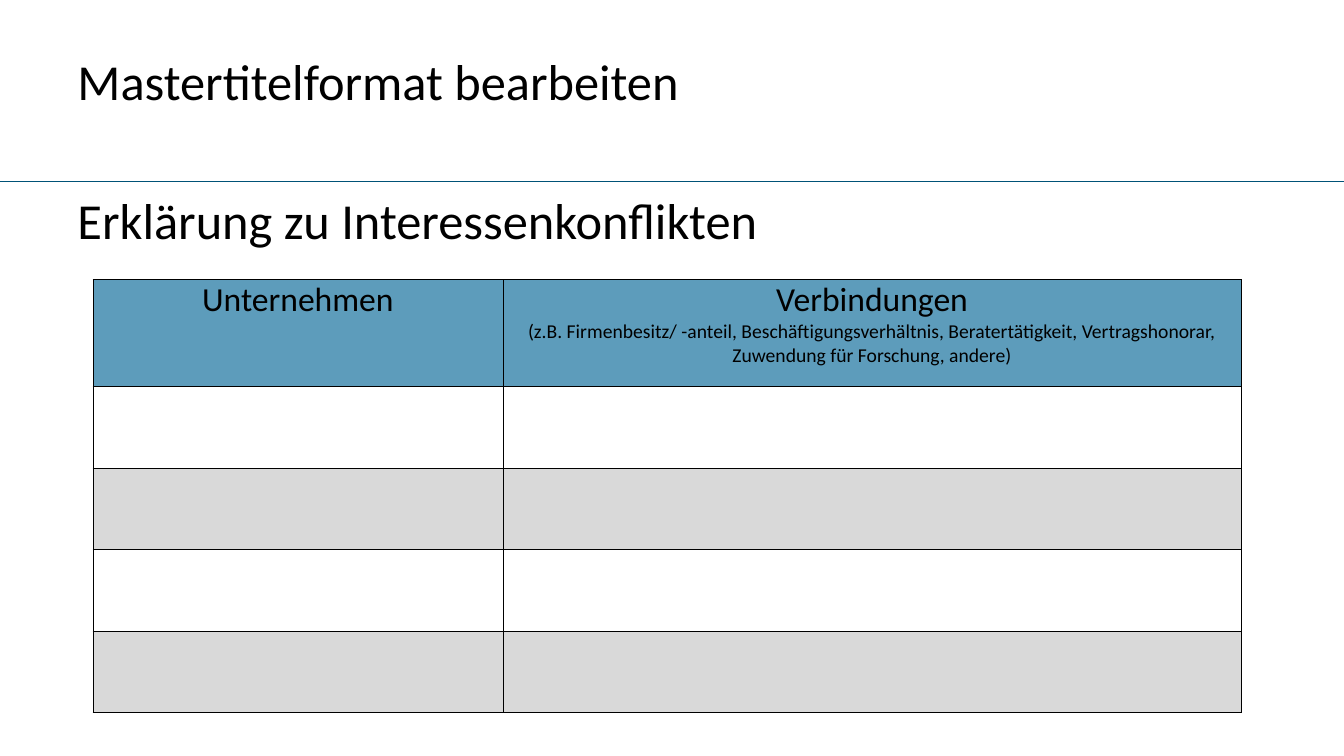
from dataclasses import dataclass

from lxml import etree
from pptx import Presentation
from pptx.dml.color import RGBColor
from pptx.enum.shapes import MSO_CONNECTOR
from pptx.enum.text import MSO_ANCHOR, PP_ALIGN
from pptx.oxml.ns import qn
from pptx.util import Inches, Pt

STRAIGHT = MSO_CONNECTOR.STRAIGHT
TOP, MIDDLE = MSO_ANCHOR.TOP, MSO_ANCHOR.MIDDLE
LEFT, CENTER = PP_ALIGN.LEFT, PP_ALIGN.CENTER
COLORS = {
    "text": "000000",
    "rule": "005277",
    "header": "5D9CBB",
    "band": "D9D9D9",
    "white": "FFFFFF",
    "border": "000000",
}
WIDTH, HEIGHT = 13.33, 7.5
COLS = (4.07, 7.32)
ROWS = (1.06,) + (0.81,) * 4


@dataclass
class Line:
    text: str
    size: int


@dataclass
class Title:
    line: Line
    top: float
    anchor: MSO_ANCHOR


TITLES = (
    Title(Line("Mastertitelformat bearbeiten", 36), 0.48, MIDDLE),
    Title(Line("Erklärung zu Interessenkonflikten", 36), 1.89, TOP),
)
HEADERS = (
    (Line("Unternehmen", 24),),
    (
        Line("Verbindungen", 24),
        Line(
            "(z.B. Firmenbesitz/ -anteil, Beschäftigungsverhältnis, "
            "Beratertätigkeit, Vertragshonorar, "
            "Zuwendung für Forschung, andere)",
            14,
        ),
    ),
)


def color(name: str) -> RGBColor:
    return RGBColor.from_string(COLORS[name])


def apply(target, values: dict) -> None:
    for name, value in values.items():
        setattr(target, name, value)


def write(frame, lines: tuple, align: PP_ALIGN, spacing: float) -> None:
    for index, line in enumerate(lines):
        para = frame.add_paragraph() if index else frame.paragraphs[0]
        apply(para, {"alignment": align, "line_spacing": spacing})
        run = para.add_run()
        run.text = line.text
        apply(run.font, {"name": "Calibri", "size": Pt(line.size), "bold": False})
        run.font.color.rgb = color("text")


def add_title(slide, title: Title) -> None:
    box = slide.shapes.add_textbox(
        Inches(0.67), Inches(title.top), Inches(12.01), Inches(0.72)
    )
    apply(box.text_frame, {"word_wrap": True, "vertical_anchor": title.anchor})
    write(box.text_frame, (title.line,), LEFT, 0.9)


def add_rule(slide, top: float) -> None:
    rule = slide.shapes.add_connector(
        STRAIGHT, 0, Inches(top), Inches(WIDTH), Inches(top)
    )
    rule.line.color.rgb = color("rule")
    rule.line.width = Pt(0.5)
    etree.SubElement(rule._element.spPr, qn("a:effectLst"))


def add_border(cell) -> None:
    props = cell._tc.get_or_add_tcPr()
    for index, side in enumerate(("lnL", "lnR", "lnT", "lnB")):
        edge = etree.Element(qn(f"a:{side}"), w=str(Pt(0.25)))
        fill = etree.SubElement(edge, qn("a:solidFill"))
        etree.SubElement(fill, qn("a:srgbClr"), val=COLORS["border"])
        props.insert(index, edge)


def add_grid(slide) -> None:
    grid = slide.shapes.add_table(
        len(ROWS), len(COLS),
        Inches(0.92), Inches(2.77), Inches(sum(COLS)), Inches(sum(ROWS)),
    ).table
    apply(grid, {"first_row": False, "horz_banding": False})
    for col, width in zip(grid.columns, COLS):
        col.width = Inches(width)
    for index, (row, height) in enumerate(zip(grid.rows, ROWS)):
        row.height = Inches(height)
        shade = "white" if index % 2 else "band"
        for cell in row.cells:
            cell.fill.solid()
            cell.fill.fore_color.rgb = color(shade if index else "header")
            add_border(cell)
    for cell, lines in zip(grid.rows[0].cells, HEADERS):
        apply(cell, {
            "margin_left": Inches(0.08),
            "margin_right": Inches(0.08),
            "margin_top": 0,
            "margin_bottom": 0,
        })
        write(cell.text_frame, lines, CENTER, 1.0)


def main() -> None:
    deck = Presentation()
    apply(deck, {"slide_width": Inches(WIDTH), "slide_height": Inches(HEIGHT)})
    slide = deck.slides.add_slide(deck.slide_layouts[6])
    add_rule(slide, 1.8)
    add_grid(slide)
    for title in TITLES:
        add_title(slide, title)
    deck.save("out.pptx")


if __name__ == "__main__":
    main()
